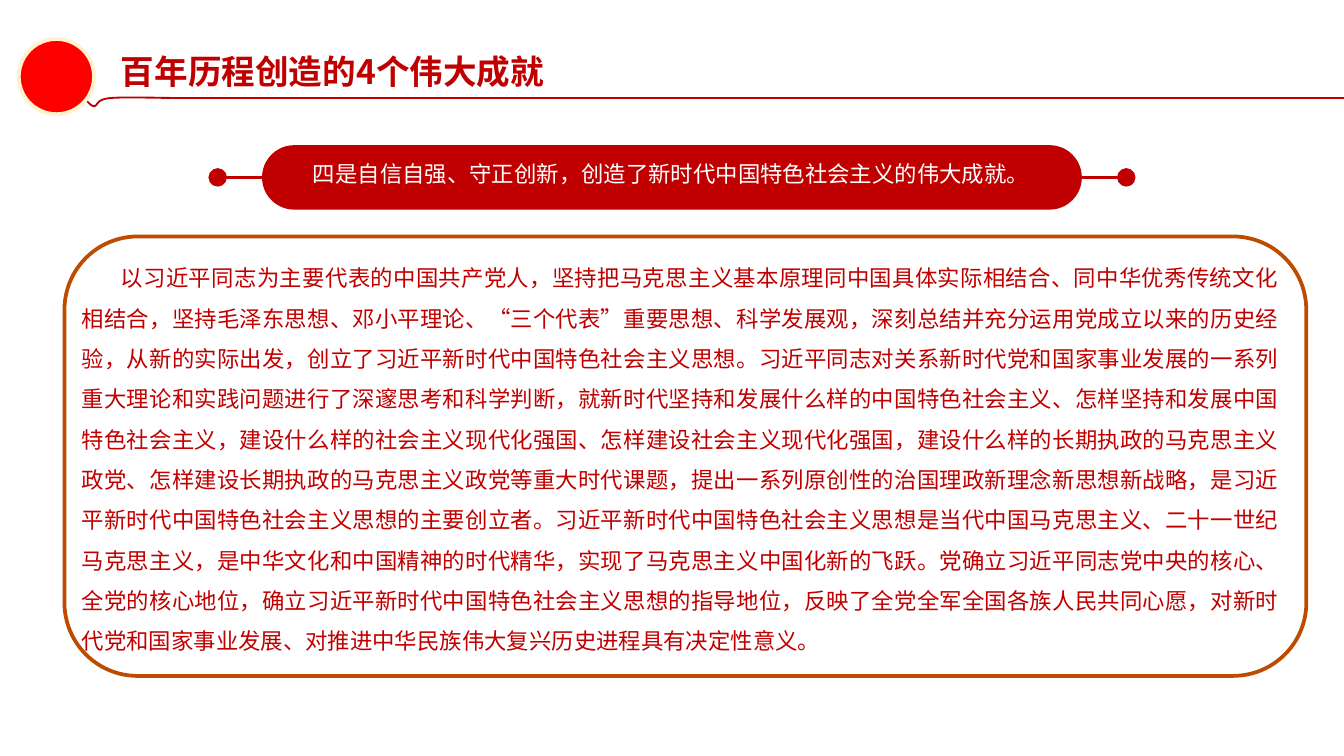
from dataclasses import dataclass

from lxml import etree
from pptx import Presentation
from pptx.dml.color import RGBColor
from pptx.enum.shapes import MSO_CONNECTOR, MSO_SHAPE
from pptx.enum.text import MSO_ANCHOR, MSO_AUTO_SIZE, PP_ALIGN
from pptx.oxml.ns import qn
from pptx.util import Inches, Pt

STRAIGHT = MSO_CONNECTOR.STRAIGHT
OVAL = MSO_SHAPE.OVAL
ROUNDED = MSO_SHAPE.ROUNDED_RECTANGLE
LEFT, CENTER, JUSTIFY = PP_ALIGN.LEFT, PP_ALIGN.CENTER, PP_ALIGN.JUSTIFY
TOP = MSO_ANCHOR.TOP
NO_FIT = MSO_AUTO_SIZE.NONE

FONT = "Noto Sans CJK SC"
COLORS = {
    "crimson": "C00000",
    "red": "FF0000",
    "cream": "FFF2CC",
    "brown": "BD4B00",
    "white": "FFFFFF",
}
SLIDE_WIDTH = 10
SLIDE_HEIGHT = SLIDE_WIDTH * 9 / 16
RULE_Y = 0.73
PILL_MIDDLE_Y = 1.32
CURVE_STEPS = 12
FLOURISH_START = (0.36, 0.77)
FLOURISH_CURVES = [
    ((0.4, 0.76), (0.44, 0.71), (0.48, 0.72)),
    ((0.53, 0.72), (0.49, 0.77), (0.53, 0.78)),
    ((0.57, 0.79), (0.59, 0.74), (0.62, 0.74)),
    ((0.65, 0.74), (0.67, 0.79), (0.7, 0.79)),
    ((0.73, 0.79), (0.71, 0.74), (0.82, 0.73)),
    ((0.93, 0.72), (1.23, 0.73), (1.34, RULE_Y)),
]
TITLE = "百年历程创造的4个伟大成就"
HEADING = "四是自信自强、守正创新，创造了新时代中国特色社会主义的伟大成就。"
BODY = (
    "以习近平同志为主要代表的中国共产党人，坚持把马克思主义基本原理同中国具体实际相结合、"
    "同中华优秀传统文化相结合，坚持毛泽东思想、邓小平理论、“三个代表”重要思想、科学发展观，"
    "深刻总结并充分运用党成立以来的历史经验，从新的实际出发，创立了习近平新时代中国特色社会主义思想。"
    "习近平同志对关系新时代党和国家事业发展的一系列重大理论和实践问题进行了深邃思考和科学判断，"
    "就新时代坚持和发展什么样的中国特色社会主义、怎样坚持和发展中国特色社会主义，"
    "建设什么样的社会主义现代化强国、怎样建设社会主义现代化强国，"
    "建设什么样的长期执政的马克思主义政党、怎样建设长期执政的马克思主义政党等重大时代课题，"
    "提出一系列原创性的治国理政新理念新思想新战略，是习近平新时代中国特色社会主义思想的主要创立者。"
    "习近平新时代中国特色社会主义思想是当代中国马克思主义、二十一世纪马克思主义，"
    "是中华文化和中国精神的时代精华，实现了马克思主义中国化新的飞跃。"
    "党确立习近平同志党中央的核心、全党的核心地位，确立习近平新时代中国特色社会主义思想的指导地位，"
    "反映了全党全军全国各族人民共同心愿，对新时代党和国家事业发展、"
    "对推进中华民族伟大复兴历史进程具有决定性意义。"
)


@dataclass
class Box:
    left: float
    top: float
    width: float
    height: float

    def lengths(self) -> list:
        return [Inches(v) for v in (self.left, self.top, self.width, self.height)]


@dataclass
class TextStyle:
    size: float
    color: str
    align: PP_ALIGN
    bold: bool = False
    line_spacing: float = 1.0
    indent: float = 0.0


def rgb(name: str) -> RGBColor:
    return RGBColor.from_string(COLORS[name])


def set_line(shape, color: str, width: float) -> None:
    shape.line.color.rgb = rgb(color)
    shape.line.width = Pt(width)


def write_text(shape, text: str, style: TextStyle) -> None:
    frame = shape.text_frame
    frame.word_wrap = True
    frame.auto_size = NO_FIT
    frame.vertical_anchor = TOP
    paragraph = frame.paragraphs[0]
    paragraph.alignment = style.align
    paragraph.line_spacing = style.line_spacing
    if style.indent:
        paragraph._p.get_or_add_pPr().set("indent", str(Inches(style.indent)))
    run = paragraph.add_run()
    run.text = text
    run.font.name = FONT
    run.font.size = Pt(style.size)
    run.font.bold = style.bold
    run.font.color.rgb = rgb(style.color)
    east_asian = etree.SubElement(run._r.get_or_add_rPr(), qn("a:ea"))
    east_asian.set("typeface", FONT)


def add_text(slide, box: Box, text: str, style: TextStyle) -> None:
    write_text(slide.shapes.add_textbox(*box.lengths()), text, style)


def add_preset(slide, kind: MSO_SHAPE, box: Box, fill: str = "", line: str = ""):
    shape = slide.shapes.add_shape(kind, *box.lengths())
    shape.shadow.inherit = False
    if fill:
        shape.fill.solid()
        shape.fill.fore_color.rgb = rgb(fill)
    else:
        shape.fill.background()
    if line:
        set_line(shape, line, 2)
    else:
        shape.line.fill.background()
    return shape


def add_line(slide, start_x: float, end_x: float, y: float, width: float):
    connector = slide.shapes.add_connector(
        STRAIGHT, Inches(start_x), Inches(y), Inches(end_x), Inches(y)
    )
    set_line(connector, "crimson", width)
    etree.SubElement(connector._element.spPr, qn("a:effectLst"))
    return connector


def add_knob(slide, pill, side: int, start_x: float, end_x: float) -> None:
    connector = add_line(slide, start_x, end_x, PILL_MIDDLE_Y, 1.5)
    connector.begin_connect(pill, side)
    line = connector._element.spPr.find(qn("a:ln"))
    tail = etree.SubElement(line, qn("a:tailEnd"))
    for name, value in (("type", "oval"), ("w", "lg"), ("len", "lg")):
        tail.set(name, value)


def curve_points(start: tuple, curve: tuple) -> list:
    points = []
    for step in range(1, CURVE_STEPS + 1):
        t = step / CURVE_STEPS
        weights = ((1 - t) ** 3, 3 * t * (1 - t) ** 2, 3 * t * t * (1 - t), t ** 3)
        points.append(tuple(
            Inches(sum(w * point[axis] for w, point in zip(weights, (start, *curve))))
            for axis in (0, 1)
        ))
    return points


def add_flourish(slide) -> None:
    builder = slide.shapes.build_freeform(*[Inches(v) for v in FLOURISH_START])
    start = FLOURISH_START
    for curve in FLOURISH_CURVES:
        builder.add_line_segments(curve_points(start, curve), close=False)
        start = curve[-1]
    shape = builder.convert_to_shape()
    shape.shadow.inherit = False
    shape.fill.background()
    set_line(shape, "crimson", 1)


def format_title(slide) -> None:
    title = slide.shapes.title
    title.left, title.top, title.width, title.height = Box(0.78, 0.34, 5.8, 0.37).lengths()
    frame = title.text_frame
    frame.margin_left = Inches(0.12)
    frame.margin_right = Inches(0.07)
    frame.margin_top = frame.margin_bottom = Inches(0.04)
    write_text(title, TITLE, TextStyle(18, "crimson", LEFT, bold=True))


def main() -> None:
    presentation = Presentation()
    presentation.slide_width = Inches(SLIDE_WIDTH)
    presentation.slide_height = Inches(SLIDE_HEIGHT)
    slide = presentation.slides.add_slide(presentation.slide_layouts[5])
    format_title(slide)

    add_flourish(slide)
    add_line(slide, 1.34, SLIDE_WIDTH, RULE_Y, 1)
    add_preset(slide, OVAL, Box(0.14, 0.29, 0.56, 0.56), "red", "cream")

    pill = add_preset(slide, ROUNDED, Box(1.95, PILL_MIDDLE_Y - 0.24, 6.1, 0.48), "crimson")
    pill.adjustments[0] = 0.5
    add_knob(slide, pill, 3, 8.05, 8.38)
    add_knob(slide, pill, 1, 1.95, 1.62)
    add_text(slide, Box(2.12, 1.14, 5.75, 0.3), HEADING, TextStyle(12, "white", CENTER))

    add_preset(slide, ROUNDED, Box(0.48, 1.76, 9.24, 3.27), line="brown")
    add_text(
        slide, Box(0.51, 1.82, 9.11, 3.13), BODY,
        TextStyle(12, "crimson", JUSTIFY, line_spacing=1.5, indent=0.29),
    )
    presentation.save("out.pptx")


if __name__ == "__main__":
    main()
